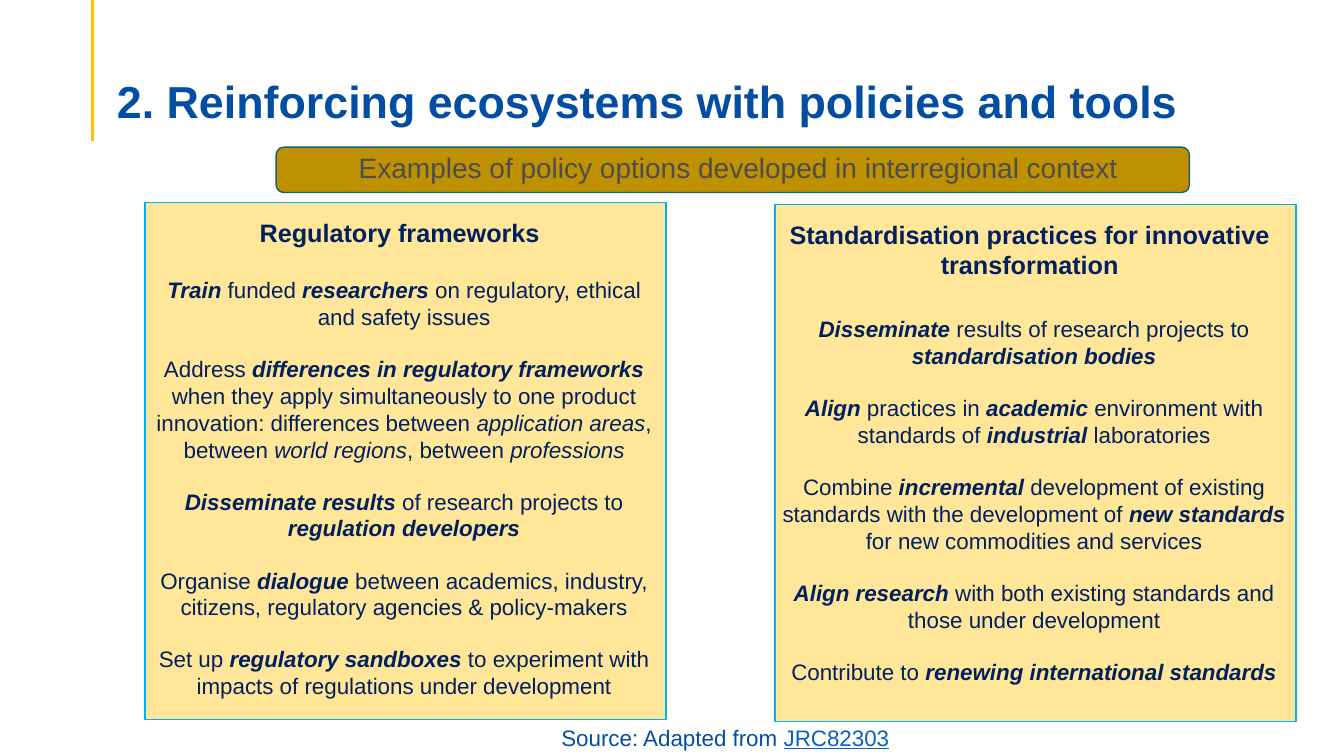
from lxml.etree import SubElement
from pptx import Presentation
from pptx.dml.color import RGBColor
from pptx.enum.shapes import MSO_CONNECTOR, MSO_SHAPE
from pptx.enum.text import MSO_ANCHOR, MSO_AUTO_SIZE, PP_ALIGN
from pptx.oxml.ns import qn
from pptx.util import Pt

COLORS = {"title": "034EA2", "rule": "FFC000", "bar": "BF9000", "rim": "166267",
          "panel": "FFE699", "edge": "00B0F0", "body": "002060",
          "lead": "4D4D4D", "link": "0563C1"}

# Asterisks mark bold italic, underscores mark italic
REGULATE = [
    "*Train* funded *researchers* on regulatory, ethical and safety issues",
    "Address *differences in regulatory frameworks* when they apply simultaneously "
    "to one product innovation: differences between _application areas_, "
    "between _world regions_, between _professions_",
    "*Disseminate results* of research projects to *regulation developers*",
    "Organise *dialogue* between academics, industry, citizens, "
    "regulatory agencies & policy-makers",
    "Set up *regulatory sandboxes* to experiment with impacts of regulations "
    "under development",
]
STANDARD = [
    "*Disseminate* results of research projects to *standardisation bodies*",
    "*Align* practices in *academic* environment with standards of "
    "*industrial* laboratories",
    "Combine *incremental* development of existing standards with the development "
    "of *new standards* for new commodities and services",
    "*Align research* with both existing standards and those under development",
    "Contribute to *renewing international standards*",
]


def rgb(name):
    return RGBColor.from_string(COLORS[name])


def assign(item, values):
    for key, value in values.items():
        setattr(item, key, value)


def add_run(para, text, color, size, **style):
    run = para.add_run()
    run.text = text
    assign(run.font, {"name": "Arial", "size": Pt(size), **style})
    run.font.color.rgb = rgb(color)


def add_marked(para, text, color, size):
    for i, part in enumerate(text.split("*")):
        for j, bit in enumerate(part.split("_")):
            if bit:
                strong = i % 2 == 1
                add_run(para, bit, color, size, bold=strong,
                        italic=strong or j % 2 == 1)


def set_frame(frame, anchor=MSO_ANCHOR.TOP, base=3.6):
    assign(frame, {"word_wrap": True, "auto_size": MSO_AUTO_SIZE.NONE,
                   "vertical_anchor": anchor, "margin_left": Pt(7.2),
                   "margin_right": Pt(7.2), "margin_top": Pt(3.6),
                   "margin_bottom": Pt(base)})
    return frame


def add_text(slide, box, **frame):
    shape = slide.shapes.add_textbox(*map(Pt, box))
    return set_frame(shape.text_frame, **frame)


def add_line(slide, box):
    frame = add_text(slide, box, anchor=MSO_ANCHOR.BOTTOM, base=0)
    para = frame.paragraphs[0]
    assign(para, {"alignment": PP_ALIGN.CENTER, "line_spacing": 0.9})
    return para


def add_block(slide, kind, box, fill, line):
    shape = slide.shapes.add_shape(kind, *map(Pt, box))
    shape.shadow.inherit = False
    shape.fill.solid()
    shape.fill.fore_color.rgb = rgb(fill)
    shape.line.color.rgb = rgb(line)
    shape.line.width = Pt(1)


# Yellow rule and slide title
def add_head(slide, left, top, width, height):
    rule = slide.shapes.add_connector(
        MSO_CONNECTOR.STRAIGHT, Pt(left - 10), Pt(0), Pt(left - 10),
        Pt(top + height + 9.3))
    rule.line.color.rgb = rgb("rule")
    rule.line.width = Pt(2.25)
    SubElement(rule._element.spPr, qn("a:effectLst"))
    title = slide.shapes.title
    assign(title, {"left": Pt(left), "top": Pt(top),
                   "width": Pt(width), "height": Pt(height)})
    frame = set_frame(title.text_frame, anchor=MSO_ANCHOR.BOTTOM, base=0)
    para = frame.paragraphs[0]
    assign(para, {"alignment": PP_ALIGN.LEFT, "line_spacing": 0.9})
    add_run(para, "2. Reinforcing ecosystems with policies and tools",
            "title", 32, bold=True)


# Gold bar with the lead line
def add_bar(slide, left, top, width, height):
    add_block(slide, MSO_SHAPE.ROUNDED_RECTANGLE, (left, top, width, height),
              "bar", "rim")
    para = add_line(slide, (left - 99.4, top - 10.8, 859, 37.4))
    add_run(para, "Examples of policy options developed in interregional context",
            "lead", 20)


# Panel with a heading and a list of options
def add_panel(slide, box, head, items, drop):
    left, top, width, height = box
    add_block(slide, MSO_SHAPE.RECTANGLE, box, "panel", "edge")
    frame = add_text(slide, (left - 4.3, top + 7, width, 43.2))
    para = frame.paragraphs[0]
    para.alignment = PP_ALIGN.CENTER
    add_run(para, head, "body", 18, bold=True)
    frame = add_text(slide, (left - 3.3, top + drop, width + 4.3, 293.8))
    for i, item in enumerate(items):
        para = frame.add_paragraph() if i else frame.paragraphs[0]
        assign(para, {"alignment": PP_ALIGN.CENTER, "space_after": Pt(18)})
        add_marked(para, item, "body", 16)


# Source line
def add_source(slide, box):
    para = add_line(slide, box)
    add_run(para, "Source: Adapted from ", "title", 16)
    add_run(para, "JRC82303", "link", 16, underline=True)


def main():
    deck = Presentation()
    assign(deck, {"slide_width": Pt(960), "slide_height": Pt(540)})
    slide = deck.slides.add_slide(deck.slide_layouts[5])
    add_head(slide, 76.3, 29.5, 859, 62)
    add_bar(slide, 197.3, 105.1, 652.3, 32.4)
    add_panel(slide, (553.7, 146.2, 372.2, 369.4),
              "Standardisation practices for innovative transformation",
              STANDARD, 75.6)
    add_panel(slide, (103.7, 144.7, 372.2, 369.4),
              "Regulatory frameworks", REGULATE, 49)
    add_source(slide, (370.1, 506.2, 295.9, 30.2))
    deck.save("out.pptx")


if __name__ == "__main__":
    main()
